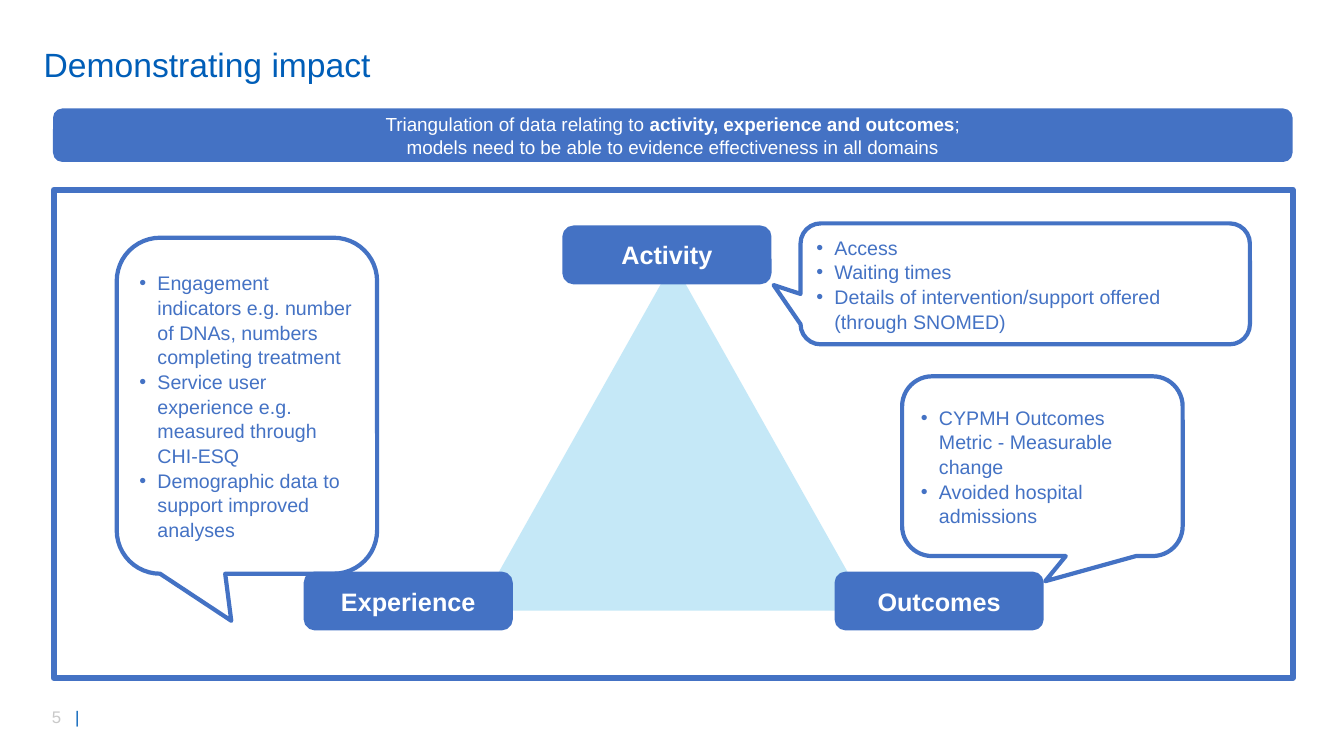
from dataclasses import dataclass

from lxml import etree
from pptx import Presentation
from pptx import util as u
from pptx.dml.color import RGBColor
from pptx.enum import shapes, text
from pptx.oxml import ns

COLUMNS, ROWS = 160, 90
Shape = shapes.MSO_SHAPE
Align = text.PP_ALIGN
Anchor = text.MSO_ANCHOR


@dataclass(frozen=True)
class Theme:
    font: str = "Arial"
    title: str = "005EB8"
    main: str = "4472C4"
    triangle: str = "41B6E6"
    muted: str = "C9C9C9"
    light: str = "FFFFFF"
    title_size: float = 24
    label_size: float = 18
    list_size: float = 14
    banner_size: float = 13.5
    page_size: float = 12
    frame_line: float = 4.5
    shape_line: float = 3
    banner_line: float = 1


def apply(target, values):
    for name, value in values.items():
        setattr(target, name, value)


def add_element(parent, tag, **attributes):
    return etree.SubElement(parent, ns.qn(tag), attributes)


class SlideBuilder:
    def __init__(self, presentation, theme):
        self.theme = theme
        self.cell_width = presentation.slide_width / COLUMNS
        self.cell_height = presentation.slide_height / ROWS
        self.slide = presentation.slides.add_slide(presentation.slide_layouts[5])

    def place(self, area):
        """Turn left, top, width, height in grid cells into slide lengths."""
        left, top, width, height = area
        return (round(left * self.cell_width), round(top * self.cell_height),
                round(width * self.cell_width), round(height * self.cell_height))

    def add_runs(self, paragraph, runs, size, align=Align.LEFT, spacing=1.0):
        """Fill a paragraph with (words, colour, bold) runs."""
        apply(paragraph, {"alignment": align, "line_spacing": spacing})
        for words, colour, bold in runs:
            run = paragraph.add_run()
            run.text = words
            apply(run.font, {"name": self.theme.font, "size": u.Pt(size), "bold": bold})
            run.font.color.rgb = RGBColor.from_string(colour)

    def paragraphs(self, shape, count, anchor=Anchor.MIDDLE):
        frame = shape.text_frame
        apply(frame, {"word_wrap": True, "vertical_anchor": anchor,
                      "auto_size": text.MSO_AUTO_SIZE.NONE})
        for _ in range(count - 1):
            frame.add_paragraph()
        return frame.paragraphs

    def title(self, area, words):
        shape = self.slide.shapes.title
        apply(shape, dict(zip(("left", "top", "width", "height"), self.place(area))))
        paragraph = self.paragraphs(shape, 1)[0]
        self.add_runs(paragraph, [(words, self.theme.title, False)],
                      self.theme.title_size, spacing=0.9)

    def page_number(self, area, number):
        shape = self.slide.shapes.add_textbox(*self.place(area))
        paragraph = self.paragraphs(shape, 1, Anchor.TOP)[0]
        properties = paragraph._p.get_or_add_pPr()
        stops = add_element(properties, "a:tabLst")
        add_element(stops, "a:tab", pos=str(u.Inches(0.23)), algn="l")
        self.add_runs(paragraph, [(f"{number}\t", self.theme.muted, False),
                                  ("|", self.theme.title, False)], self.theme.page_size)

    def shape(self, kind, area, fill=None, line_width=None):
        shape = self.slide.shapes.add_shape(kind, *self.place(area))
        shape.shadow.inherit = False
        if fill:
            shape.fill.solid()
            shape.fill.fore_color.rgb = RGBColor.from_string(fill)
        else:
            shape.fill.background()
        if line_width:
            shape.line.color.rgb = RGBColor.from_string(self.theme.main)
            shape.line.width = u.Pt(line_width)
        else:
            shape.line.fill.background()
        return shape

    def triangle(self, area, opacity):
        shape = self.shape(Shape.ISOSCELES_TRIANGLE, area, self.theme.triangle)
        colour = shape._element.spPr.find(ns.qn("a:solidFill"))[0]
        add_element(colour, "a:alpha", val=str(opacity * 1000))

    def box(self, area, lines, size, line_width):
        """Add a filled rounded box of centred lines, each a list of (words, bold)."""
        shape = self.shape(Shape.ROUNDED_RECTANGLE, area, self.theme.main, line_width)
        for paragraph, line in zip(self.paragraphs(shape, len(lines)), lines):
            runs = [(words, self.theme.light, bold) for words, bold in line]
            self.add_runs(paragraph, runs, size, Align.CENTER)

    def callout(self, area, tail, items):
        """Add a bulleted speech bubble; tail is its tip as shares from the centre."""
        shape = self.shape(Shape.ROUNDED_RECTANGULAR_CALLOUT, area,
                           line_width=self.theme.shape_line)
        shape.adjustments[0], shape.adjustments[1] = tail
        indent = u.Inches(0.18)
        for paragraph, item in zip(self.paragraphs(shape, len(items)), items):
            properties = paragraph._p.get_or_add_pPr()
            for name, value in {"marL": indent, "indent": -indent}.items():
                properties.set(name, str(value))
            add_element(properties, "a:buFont", typeface=self.theme.font)
            add_element(properties, "a:buChar", char="•")
            self.add_runs(paragraph, [(item, self.theme.main, False)],
                          self.theme.list_size, spacing=1.05)


def main():
    presentation = Presentation()
    apply(presentation, {"slide_width": u.Inches(13.33), "slide_height": u.Inches(7.5)})
    theme = Theme()
    builder = SlideBuilder(presentation, theme)

    builder.page_number((5, 83.6, 11.3, 3.6), 5)
    builder.title((4, 4.9, 64.7, 6), "Demonstrating impact")
    builder.triangle((56.8, 31.2, 46.7, 41.5), opacity=30)

    corners = {"Activity": (67.2, 27.1), "Experience": (36.4, 68.3), "Outcomes": (99.6, 68.3)}
    for name, corner in corners.items():
        builder.box((*corner, 24.4, 6.5), [[(name, True)]], theme.label_size, theme.shape_line)

    builder.callout((13.9, 28.3, 31, 40), (-0.06, 0.64), [
        "Engagement indicators e.g. number of DNAs, numbers completing treatment",
        "Service user experience e.g. measured through CHI-ESQ",
        "Demographic data to support improved analyses"])
    builder.callout((107.4, 44.8, 33.4, 21.4), (0.01, 0.64), [
        "CYPMH Outcomes Metric - Measurable change",
        "Avoided hospital admissions"])
    builder.callout((95.3, 26.6, 53.5, 14.4), (-0.56, 0.01), [
        "Access",
        "Waiting times",
        "Details of intervention/support offered (through SNOMED)"])

    builder.shape(Shape.RECTANGLE, (6.4, 22.6, 147.5, 58.1), line_width=theme.frame_line)
    builder.box((6.4, 13, 147.4, 6.2), [
        [("Triangulation of data relating to ", False),
         ("activity, experience and outcomes", True), (";", False)],
        [("models need to be able to evidence effectiveness in all domains", False)],
    ], theme.banner_size, theme.banner_line)

    presentation.save("out.pptx")


if __name__ == "__main__":
    main()
